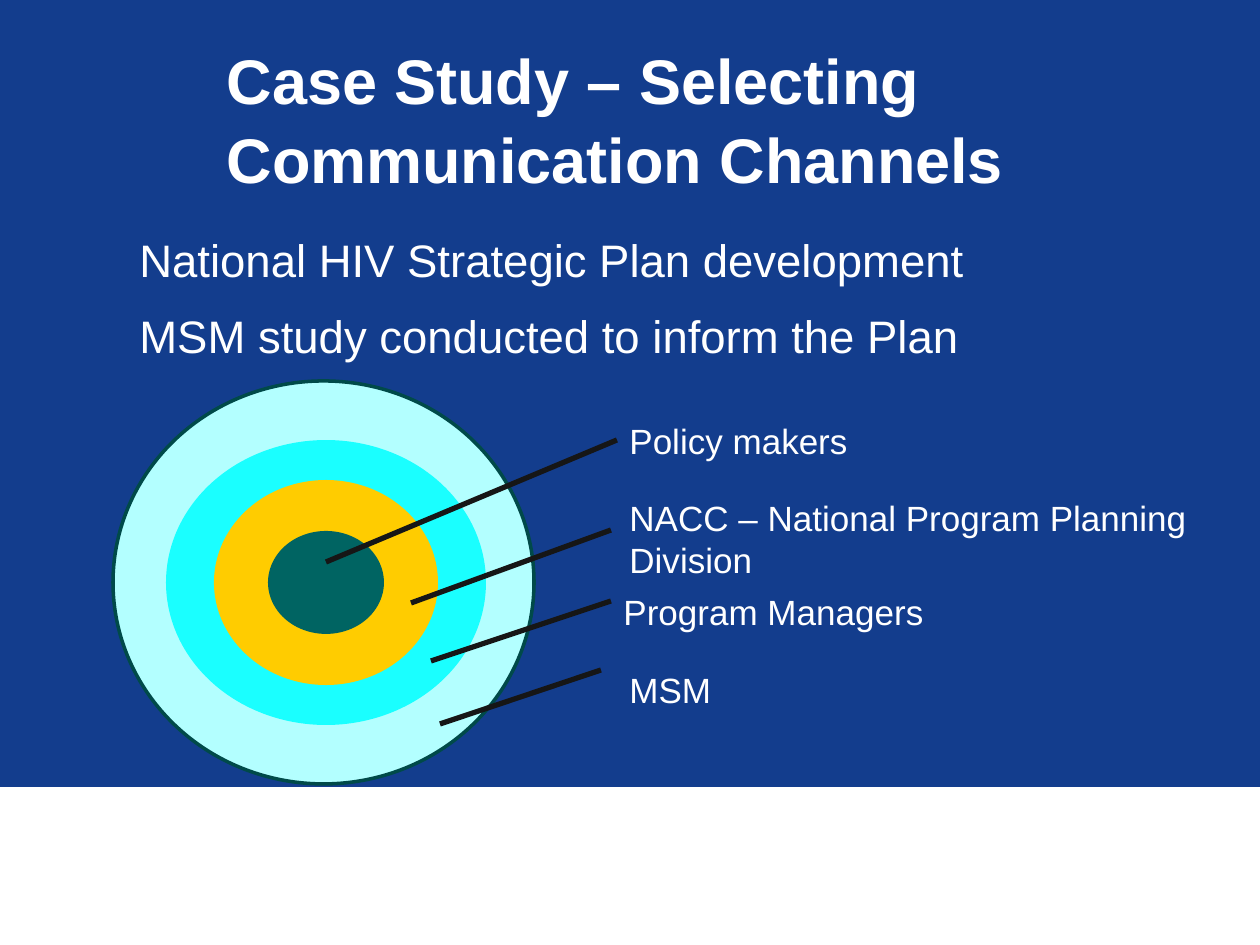
import pptx
import pptx.util
import pptx.dml.color
import pptx.enum.shapes
import pptx.enum.text
import pptx.oxml.ns
import lxml.etree

# Content, lengths in px (126 to the inch)
TITLE = "Case Study – Selecting Communication Channels"
TITLE_BOX = (214, 38, 964, 152)
STATEMENTS = ["National HIV Strategic Plan development",
              "MSM study conducted to inform the Plan"]
STATEMENT_BOX = (127, 220, 1070, 546)
BAND_BOX = (0, 787, 1260, 158)

# Rings from the outside in: box, fill, outline
RINGS = [
    ((113, 381, 421, 403), "outer", "outline"),
    ((166, 440, 320, 285), "middle", None),
    ((214, 480, 224, 205), "inner", None),
    ((268, 531, 116, 103), "core", None),
]

# Audiences from the core out: label, label position, pointer start and end
LABEL_WIDTH = 621
AUDIENCES = [
    ("Policy makers", (617, 413), 55, (326, 562), (617, 440)),
    ("NACC – National Program Planning Division", (617, 490), 97, (411, 603), (611, 530)),
    ("Program Managers", (611, 584), 55, (431, 661), (611, 601)),
    ("MSM", (617, 662), 55, (440, 724), (601, 670)),
]

THEME = {
    "font": "Arial",
    "background": "133D8D", "text": "FFFFFF", "band": "FFFFFF", "pointer": "161616",
    "outer": "B3FFFF", "middle": "1AFFFF", "inner": "FFCC00", "core": "006462",
    "outline": "004A49",
    "title_size": 36, "statement_size": 26, "label_size": 20,
}


def px(*lengths):
    return [pptx.util.Emu(round(length * 914400 / 126)) for length in lengths]


def color(name):
    return pptx.dml.color.RGBColor.from_string(THEME[name])


def write(shape, lines, size, bold=False):
    frame = shape.text_frame
    frame.word_wrap = True
    frame.auto_size = pptx.enum.text.MSO_AUTO_SIZE.NONE
    frame.text = "\n".join(lines)
    for paragraph in frame.paragraphs:
        paragraph.alignment = pptx.enum.text.PP_ALIGN.LEFT
        for run in paragraph.runs:
            run.font.name = THEME["font"]
            run.font.size = pptx.util.Pt(THEME[size])
            run.font.bold = bold
            run.font.color.rgb = color("text")
    return frame


def add_filled(slide, kind, box, fill, outline=None):
    shape = slide.shapes.add_shape(kind, *px(*box))
    shape.shadow.inherit = False
    shape.fill.solid()
    shape.fill.fore_color.rgb = color(fill)
    if outline:
        shape.line.color.rgb = color(outline)
        shape.line.width = pptx.util.Pt(2)
    else:
        shape.line.fill.background()


def add_pointer(slide, start, end):
    connector = slide.shapes.add_connector(
        pptx.enum.shapes.MSO_CONNECTOR.STRAIGHT, *px(*start, *end))
    connector.line.color.rgb = color("pointer")
    connector.line.width = pptx.util.Pt(3)
    lxml.etree.SubElement(connector._element.spPr, pptx.oxml.ns.qn("a:effectLst"))


def main():
    presentation = pptx.Presentation()
    presentation.slide_width, presentation.slide_height = px(1260, 945)
    slide = presentation.slides.add_slide(presentation.slide_layouts[5])
    slide.background.fill.solid()
    slide.background.fill.fore_color.rgb = color("background")
    shape_kinds = pptx.enum.shapes.MSO_SHAPE

    # Footer band
    add_filled(slide, shape_kinds.RECTANGLE, BAND_BOX, "band")

    # Title
    title = slide.shapes.title
    title.left, title.top, title.width, title.height = px(*TITLE_BOX)
    frame = write(title, [TITLE], "title_size", bold=True)
    frame.vertical_anchor = pptx.enum.text.MSO_ANCHOR.MIDDLE
    frame.margin_top, frame.margin_bottom = px(12, 6)
    frame.paragraphs[0].line_spacing = 1.05

    # Statements
    frame = write(slide.shapes.add_textbox(*px(*STATEMENT_BOX)), STATEMENTS, "statement_size")
    frame.margin_top, = px(12)
    for paragraph in frame.paragraphs[1:]:
        paragraph.space_before = pptx.util.Pt(12)

    # Audience rings
    for box, fill, outline in RINGS:
        add_filled(slide, shape_kinds.OVAL, box, fill, outline)

    # Pointers and labels
    for label, position, height, start, end in AUDIENCES:
        add_pointer(slide, start, end)
        box = slide.shapes.add_textbox(*px(*position, LABEL_WIDTH, height))
        write(box, [label], "label_size")

    presentation.save("out.pptx")


if __name__ == "__main__":
    main()
